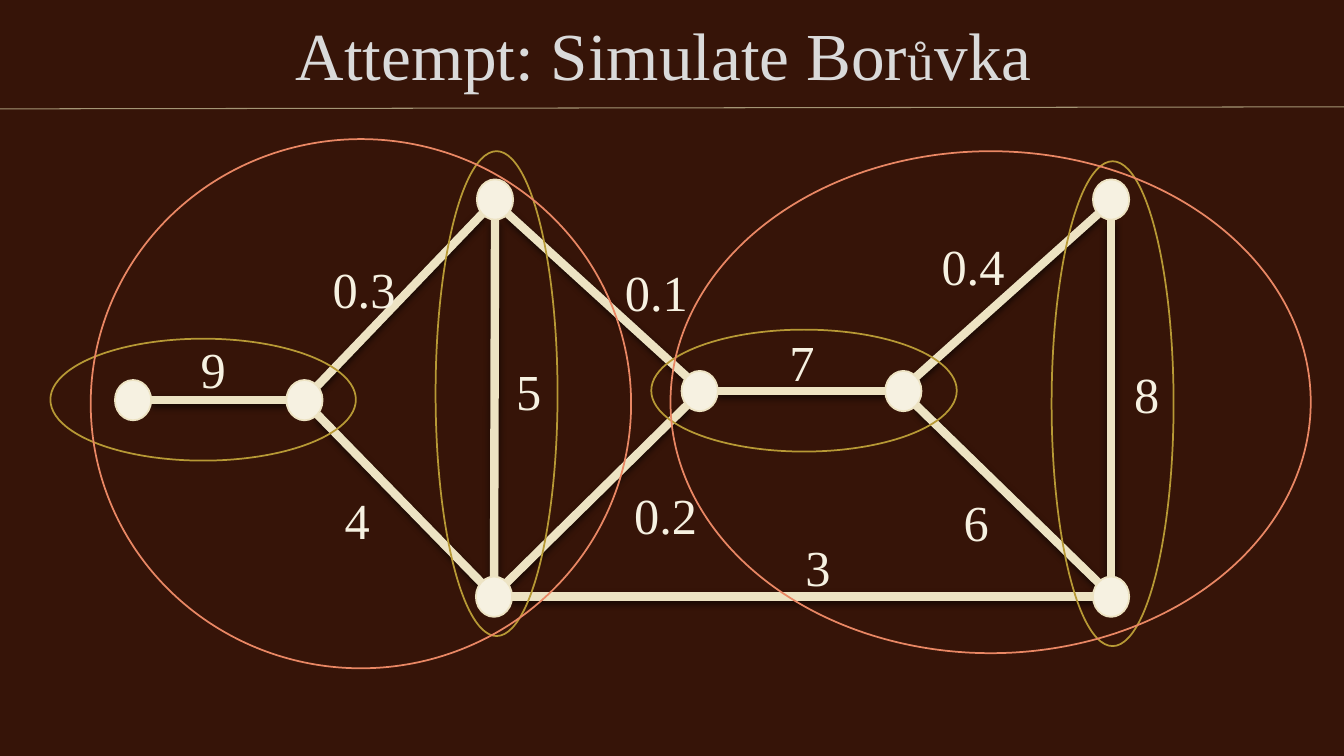
import math
from dataclasses import dataclass

import pptx
import pptx.dml.color
import pptx.enum.shapes
import pptx.enum.text
import pptx.oxml
import pptx.oxml.ns
import pptx.util
from pptx.util import Inches

RGBColor = pptx.dml.color.RGBColor
BACKGROUND = RGBColor(0x36, 0x14, 0x08)
TITLE_GREY = RGBColor(0xDA, 0xDA, 0xDA)
CREAM = RGBColor(0xF6, 0xF1, 0xE1)
EDGE_SAND = RGBColor(0xED, 0xE3, 0xC3)
RULE_TAN = RGBColor(0xA5, 0x96, 0x75)
FIRST_ROUND_GOLD = RGBColor(0xB7, 0x99, 0x35)
SECOND_ROUND_CORAL = RGBColor(0xE9, 0x87, 0x64)

FONT = "Times New Roman"
NODE_WIDTH, NODE_HEIGHT = 0.36, 0.4
LABEL_HEIGHT = 0.71
NAMESPACE = pptx.oxml.ns.nsdecls("a")
NO_EFFECT = f"<a:effectLst {NAMESPACE}/>"
SHADOW = (
    f'<a:effectLst {NAMESPACE}><a:outerShdw blurRad="63500" dist="25400" dir="5400000" '
    'rotWithShape="0"><a:srgbClr val="000000"><a:alpha val="60000"/></a:srgbClr>'
    "</a:outerShdw></a:effectLst>"
)
TITLE_OUTLINE = (
    f'<a:ln {NAMESPACE} w="9525"><a:solidFill><a:srgbClr val="404040">'
    '<a:alpha val="10000"/></a:srgbClr></a:solidFill><a:prstDash val="solid"/></a:ln>'
)


@dataclass(frozen=True)
class Node:
    x: float
    y: float


@dataclass(frozen=True)
class Edge:
    start: Node
    end: Node


@dataclass(frozen=True)
class Label:
    text: str
    left: float
    top: float
    width: float = 0.69


@dataclass(frozen=True)
class Component:
    left: float
    top: float
    width: float
    height: float
    color: RGBColor


# Graph
FAR_LEFT = Node(1.32, 3.97)
LEFT = Node(3.02, 3.97)
TOP_MIDDLE = Node(4.91, 1.98)
BOTTOM_MIDDLE = Node(4.9, 5.92)
CENTER = Node(6.94, 3.88)
RIGHT = Node(8.96, 3.88)
TOP_RIGHT = Node(11.02, 1.98)
BOTTOM_RIGHT = Node(11.02, 5.92)
NODES = [FAR_LEFT, LEFT, TOP_MIDDLE, BOTTOM_MIDDLE, CENTER, RIGHT, TOP_RIGHT, BOTTOM_RIGHT]

EDGES = [
    Edge(FAR_LEFT, LEFT),
    Edge(LEFT, TOP_MIDDLE),
    Edge(LEFT, BOTTOM_MIDDLE),
    Edge(TOP_MIDDLE, BOTTOM_MIDDLE),
    Edge(TOP_MIDDLE, CENTER),
    Edge(BOTTOM_MIDDLE, CENTER),
    Edge(CENTER, RIGHT),
    Edge(RIGHT, TOP_RIGHT),
    Edge(RIGHT, BOTTOM_RIGHT),
    Edge(TOP_RIGHT, BOTTOM_RIGHT),
    Edge(BOTTOM_MIDDLE, BOTTOM_RIGHT),
]
LABELS = [
    Label("9", 1.89, 3.31),
    Label("0.3", 3.2, 2.51, 0.96),
    Label("4", 3.32, 4.8, 1.02),
    Label("5", 5.02, 3.52),
    Label("0.1", 6.1, 2.54, 0.96),
    Label("0.2", 6.19, 4.75, 0.91),
    Label("7", 7.73, 3.24),
    Label("0.4", 9.24, 2.28, 0.86),
    Label("6", 9.46, 4.82),
    Label("8", 11.15, 3.55),
    Label("3", 7.89, 5.27),
]
COMPONENTS = [
    Component(10.43, 1.6, 1.21, 4.81, FIRST_ROUND_GOLD),
    Component(6.46, 3.27, 3.03, 1.21, FIRST_ROUND_GOLD),
    Component(4.32, 1.5, 1.21, 4.81, FIRST_ROUND_GOLD),
    Component(0.5, 3.36, 3.03, 1.21, FIRST_ROUND_GOLD),
    Component(6.65, 1.5, 6.35, 4.98, SECOND_ROUND_CORAL),
    Component(0.9, 1.38, 5.36, 5.25, SECOND_ROUND_CORAL),
]


def direction(delta: float) -> int:
    return 0 if abs(delta) < 0.1 else int(math.copysign(1, delta))


def rim_point(node: Node, target: Node) -> tuple[float, float]:
    """Find the point on the node's rim, in steps of 45 degrees, facing the target."""
    horizontal = direction(target.x - node.x)
    vertical = direction(target.y - node.y)
    length = math.hypot(horizontal, vertical)
    return (node.x + horizontal * NODE_WIDTH / 2 / length,
            node.y + vertical * NODE_HEIGHT / 2 / length)


def add_line(slide, start: tuple[float, float], end: tuple[float, float],
             color: RGBColor, width: float, effect: str) -> None:
    line = slide.shapes.add_connector(
        pptx.enum.shapes.MSO_CONNECTOR.STRAIGHT, *map(Inches, start + end))
    line.line.color.rgb = color
    line.line.width = pptx.util.Pt(width)
    line._element.spPr.append(pptx.oxml.parse_xml(effect))


def add_ellipse(slide, left: float, top: float, width: float, height: float,
                line_color: RGBColor, fill_color: RGBColor | None = None) -> None:
    ellipse = slide.shapes.add_shape(
        pptx.enum.shapes.MSO_SHAPE.OVAL, *map(Inches, (left, top, width, height)))
    ellipse.shadow.inherit = False
    if fill_color is None:
        ellipse.fill.background()
    else:
        ellipse.fill.solid()
        ellipse.fill.fore_color.rgb = fill_color
    ellipse.line.color.rgb = line_color
    ellipse.line.width = pptx.util.Pt(1.25)


def format_run(run, size: float, color: RGBColor) -> None:
    run.font.name = FONT
    run.font.size = pptx.util.Pt(size)
    run.font.color.rgb = color


def add_label(slide, label: Label) -> None:
    box = slide.shapes.add_textbox(
        *map(Inches, (label.left, label.top, label.width, LABEL_HEIGHT)))
    box.text_frame.word_wrap = True
    box.text_frame.auto_size = pptx.enum.text.MSO_AUTO_SIZE.SHAPE_TO_FIT_TEXT
    box.text_frame.text = label.text
    format_run(box.text_frame.paragraphs[0].runs[0], 36, CREAM)


def fill_title(slide) -> None:
    title = slide.shapes.title
    title.left, title.top, title.width, title.height = map(Inches, (0, 0, 13.33, 1.06))
    title.text_frame.auto_size = pptx.enum.text.MSO_AUTO_SIZE.NONE
    title.text_frame.vertical_anchor = pptx.enum.text.MSO_ANCHOR.MIDDLE
    paragraph = title.text_frame.paragraphs[0]
    paragraph.alignment = pptx.enum.text.PP_ALIGN.CENTER
    for text, size in (("Attempt: Simulate Bor", 48), ("ů", 38), ("vka ", 48)):
        run = paragraph.add_run()
        run.text = text
        format_run(run, size, TITLE_GREY)
        properties = run.font._element
        properties.insert(0, pptx.oxml.parse_xml(TITLE_OUTLINE))
        fill = properties.find(pptx.oxml.ns.qn("a:solidFill"))
        fill.addnext(pptx.oxml.parse_xml(SHADOW))


def main() -> None:
    presentation = pptx.Presentation()
    presentation.slide_width, presentation.slide_height = Inches(13.33), Inches(7.5)
    slide = presentation.slides.add_slide(presentation.slide_layouts.get_by_name("Title Only"))
    slide.background.fill.solid()
    slide.background.fill.fore_color.rgb = BACKGROUND

    # Title and rule
    fill_title(slide)
    add_line(slide, (0, 1.08), (13.33, 1.06), RULE_TAN, 0.75, NO_EFFECT)

    # Weighted graph
    for edge in EDGES:
        add_line(slide, rim_point(edge.start, edge.end), rim_point(edge.end, edge.start),
                 EDGE_SAND, 6, SHADOW)
    for label in LABELS:
        add_label(slide, label)
    for node in NODES:
        add_ellipse(slide, node.x - NODE_WIDTH / 2, node.y - NODE_HEIGHT / 2,
                    NODE_WIDTH, NODE_HEIGHT, EDGE_SAND, CREAM)

    # Components merged in each round
    for component in COMPONENTS:
        add_ellipse(slide, component.left, component.top,
                    component.width, component.height, component.color)

    presentation.save("out.pptx")


if __name__ == "__main__":
    main()
